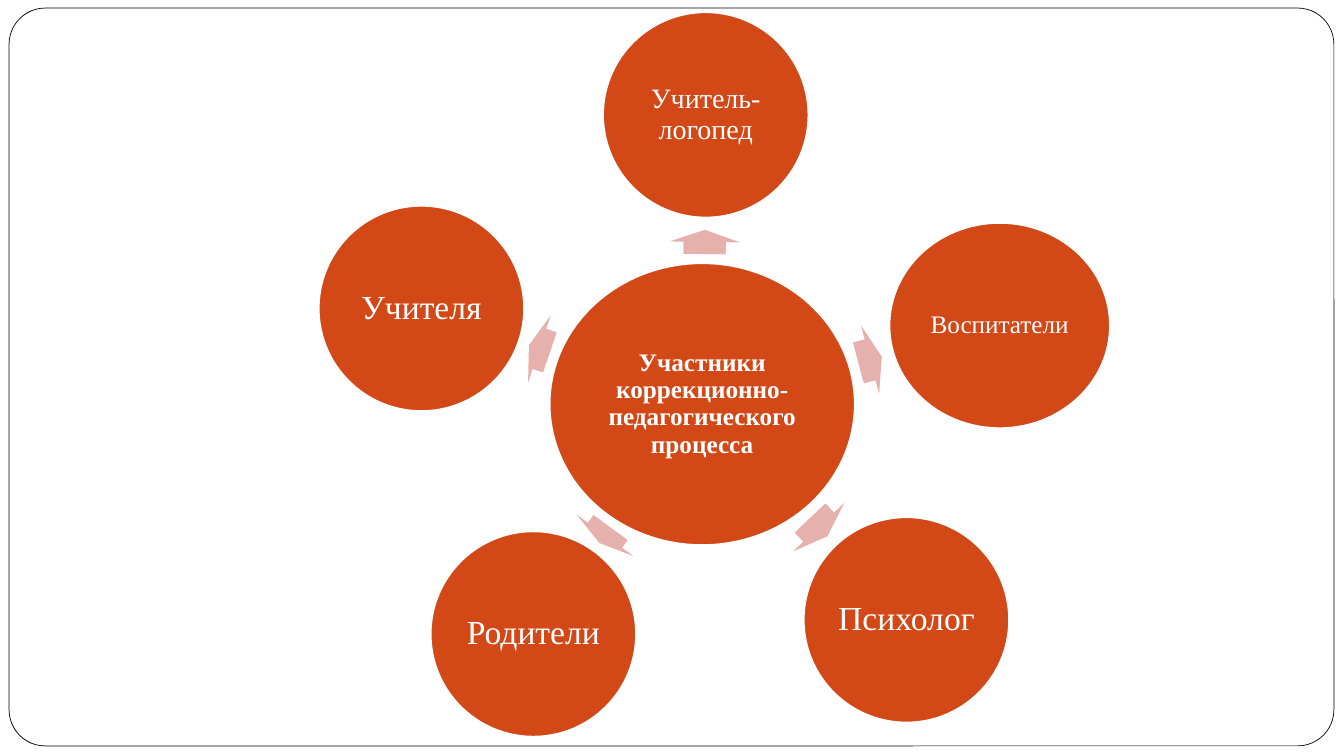
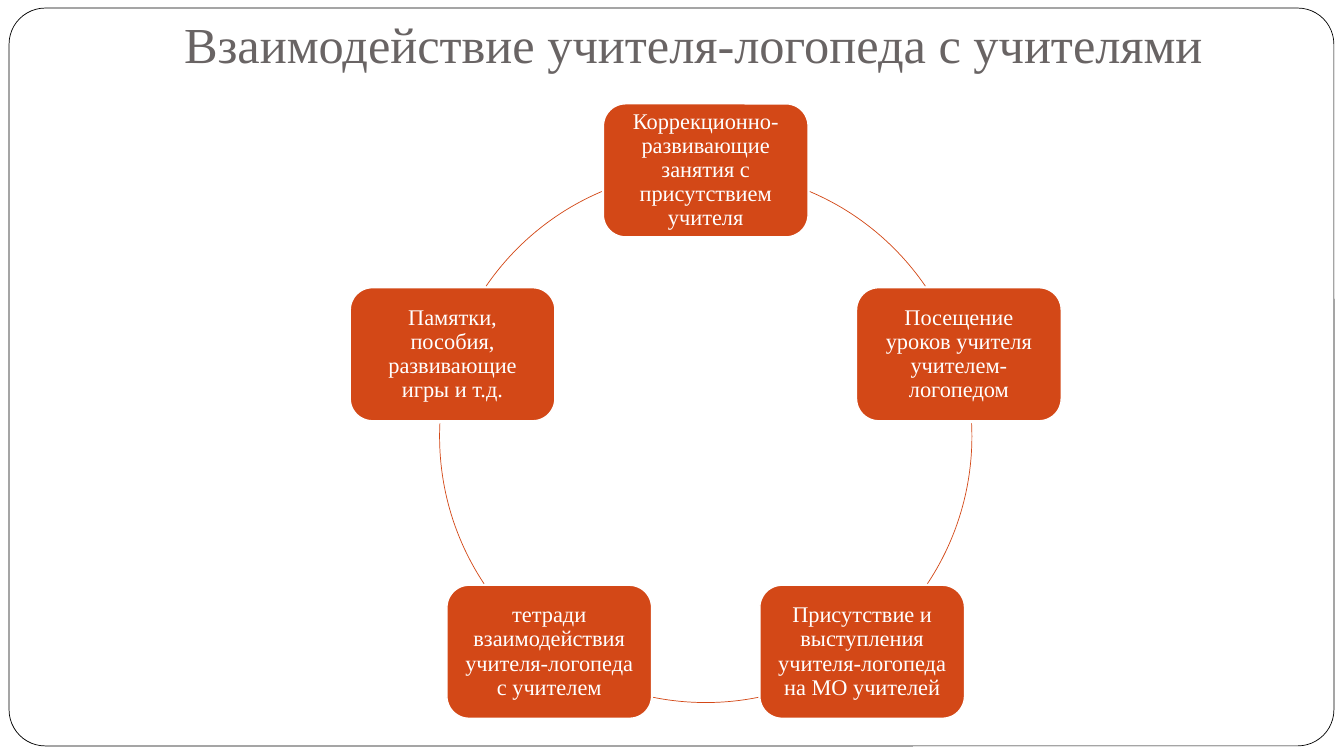
from dataclasses import dataclass
from math import cos, radians, sin

from pptx import Presentation
from pptx.dml.color import RGBColor
from pptx.enum.shapes import MSO_SHAPE
from pptx.enum.text import MSO_ANCHOR, MSO_AUTO_SIZE, PP_ALIGN
from pptx.util import Inches, Pt


@dataclass(frozen=True)
class Theme:
    font: str = "Times New Roman"
    white: str = "FFFFFF"
    black: str = "000000"
    rust: str = "D34817"
    pink: str = "E6B1AC"
    grey: str = "696464"
    title: int = 36
    large: int = 24
    mid: int = 20
    small: int = 18
    card: int = 16


THEME = Theme()

HUB = ("Участники коррекционно-педагогического процесса", 5.45, 2.61, 3.03, 2.8)

ROLES = [
    ("Учитель-логопед", THEME.mid, 5.98, 0.12, 2.04),
    ("Воспитатели", THEME.small, 8.82, 2.21, 2.19),
    ("Психолог", THEME.large, 7.97, 5.13, 2.04),
    ("Родители", THEME.large, 4.27, 5.27, 2.04),
    ("Учителя", THEME.large, 3.16, 2.04, 2.04),
]
ROLE_H = 2.04

ARROWS = [
    (6.99, 2.4, 0.24, 270.8),
    (8.63, 3.57, 0.24, 345.2),
    (8.12, 5.23, 0.25, 46.5),
    (6, 5.31, 0.19, 126.2),
    (5.35, 3.46, 0.22, 198.7),
]
ARROW_H = 0.7

HEAD = "Взаимодействие учителя-логопеда с учителями"
CARDS = [
    "Коррекционно-развивающие занятия с присутствием учителя",
    "Посещение уроков учителя учителем-логопедом",
    "Присутствие и выступления учителя-логопеда на МО учителей",
    "тетради взаимодействия учителя-логопеда с учителем",
    "Памятки, пособия, развивающие игры и т.д.",
]
CARD_W, CARD_H = 2.03, 1.32
RING_X, RING_Y, RING_R = 7, 4.33, 2.64
ARCS = [(293, 325.6), (357.2, 33.6), (78.6, 101.4), (146.4, 182.8), (214.4, 247)]


def tint(code):
    return RGBColor.from_string(code)


def shape(slide, kind, box, fill=None, line=None, width=1):
    item = slide.shapes.add_shape(kind, *map(Inches, box))
    item.shadow.inherit = False
    if fill:
        item.fill.solid()
        item.fill.fore_color.rgb = tint(fill)
    else:
        item.fill.background()
    if line:
        item.line.color.rgb = tint(line)
        item.line.width = Pt(width)
    else:
        item.line.fill.background()
    return item


def write(item, text, size, color, pads, anchor=MSO_ANCHOR.MIDDLE, space=0.9, bold=False):
    frame = item.text_frame
    frame.word_wrap = True
    frame.auto_size = MSO_AUTO_SIZE.NONE
    frame.vertical_anchor = anchor
    (frame.margin_left, frame.margin_top,
     frame.margin_right, frame.margin_bottom) = map(Inches, pads)
    para = frame.paragraphs[0]
    para.alignment = PP_ALIGN.CENTER
    para.line_spacing = space
    run = para.add_run()
    run.text = text
    run.font.name = THEME.font
    run.font.size = Pt(size)
    run.font.bold = bold
    run.font.color.rgb = tint(color)


def border(deck, slide):
    item = shape(slide, MSO_SHAPE.ROUNDED_RECTANGLE, (0.09, 0.08, 13.14, 7.32),
                 THEME.white, THEME.black, 0.5)
    item.adjustments[0] = 0.049
    deck.slide_master.shapes._spTree.insert(2, item._element)


def disc(slide, text, size, box, bold=False):
    item = shape(slide, MSO_SHAPE.OVAL, box, THEME.rust, THEME.white, 1.5)
    write(item, text, size, THEME.white, [0.03] * 4, bold=bold)


def arrow(slide, x, y, width, angle):
    box = (x - width / 2, y - ARROW_H / 2, width, ARROW_H)
    item = shape(slide, MSO_SHAPE.RIGHT_ARROW, box, THEME.pink)
    item.adjustments[0] = 0.6
    item.adjustments[1] = 0.5
    item.rotation = angle


def card(slide, text, angle):
    x = RING_X + RING_R * cos(radians(angle))
    y = RING_Y + RING_R * sin(radians(angle))
    box = (x - CARD_W / 2, y - CARD_H / 2, CARD_W, CARD_H)
    item = shape(slide, MSO_SHAPE.ROUNDED_RECTANGLE, box, THEME.rust, THEME.white)
    write(item, text, THEME.card, THEME.white, [0.07] * 4)


def arc(slide, start, end):
    box = (RING_X - RING_R, RING_Y - RING_R, 2 * RING_R, 2 * RING_R)
    item = shape(slide, MSO_SHAPE.ARC, box, line=THEME.rust, width=0.5)
    for spot, angle in enumerate((start, end)):
        item.adjustments[spot] = angle * 0.6


def title(slide, text):
    item = slide.shapes.title
    item.left, item.top, item.width, item.height = map(Inches, (1.1, 0.1, 11.56, 0.73))
    write(item, text, THEME.title, THEME.grey, (0.1, 0.05, 0.1, 0.1),
          MSO_ANCHOR.BOTTOM, 1)


def team(slide):
    text, *box = HUB
    disc(slide, text, THEME.small, box, True)
    for point, (name, size, x, y, width) in zip(ARROWS, ROLES):
        arrow(slide, *point)
        disc(slide, name, size, (x, y, width, ROLE_H))


def cycle(slide):
    title(slide, HEAD)
    step = 360 / len(CARDS)
    for spot, (text, span) in enumerate(zip(CARDS, ARCS)):
        card(slide, text, spot * step - 90)
        arc(slide, *span)


def main():
    deck = Presentation()
    deck.slide_width, deck.slide_height = Inches(13.33), Inches(7.5)
    first = deck.slides.add_slide(deck.slide_layouts[6])
    border(deck, first)
    team(first)
    cycle(deck.slides.add_slide(deck.slide_layouts[5]))
    deck.save("out.pptx")


if __name__ == "__main__":
    main()
